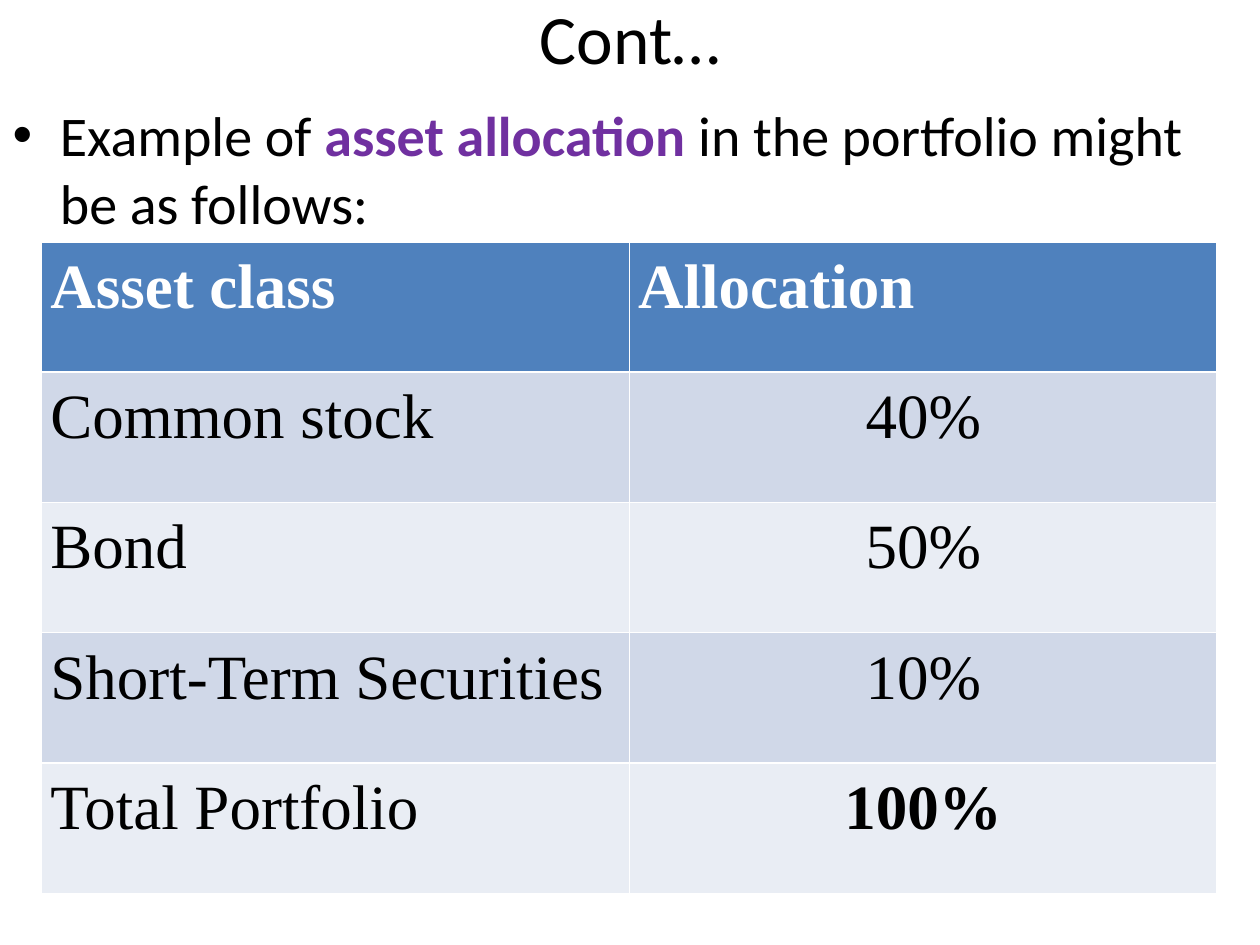
from dataclasses import dataclass

from pptx import Presentation
from pptx.dml.color import RGBColor
from pptx.enum.text import MSO_ANCHOR, MSO_AUTO_SIZE, PP_ALIGN as Align
from pptx.util import Inches, Pt

COLORS = {
    "text": "000000",
    "highlight": "7030A0",
    "header_text": "FFFFFF",
    "header": "4F81BD",
    "band_dark": "D0D8E8",
    "band_light": "E9EDF4",
}


@dataclass
class AllocationRow:
    asset_class: str
    share: str
    fill: str
    color: str = "text"
    bold_label: bool = False
    bold_share: bool = False
    share_align: Align = Align.CENTER


ROWS = [
    AllocationRow("Asset class", "Allocation", "header", "header_text",
                  True, True, Align.JUSTIFY),
    AllocationRow("Common stock", "40%", "band_dark"),
    AllocationRow("Bond", "50%", "band_light"),
    AllocationRow("Short-Term Securities", "10%", "band_dark"),
    AllocationRow("Total Portfolio", "100%", "band_light", bold_share=True),
]


def add_text(paragraph, text: str, *, size: float, font: str = "Calibri",
             color: str = "text", bold: bool = False) -> None:
    run = paragraph.add_run()
    run.text = text
    run.font.name = font
    run.font.size = Pt(size)
    run.font.bold = bold
    run.font.color.rgb = RGBColor.from_string(COLORS[color])


def place(shape, left: float, top: float, width: float, height: float) -> None:
    shape.left, shape.top = Inches(left), Inches(top)
    shape.width, shape.height = Inches(width), Inches(height)
    shape.text_frame.auto_size = MSO_AUTO_SIZE.NONE


def fill_cell(cell, text: str, row: AllocationRow, align: Align, bold: bool) -> None:
    cell.fill.solid()
    cell.fill.fore_color.rgb = RGBColor.from_string(COLORS[row.fill])
    cell.margin_left = cell.margin_right = Inches(0.07)
    cell.margin_top = cell.margin_bottom = 0
    paragraph = cell.text_frame.paragraphs[0]
    paragraph.alignment = align
    paragraph.line_spacing = 1.15
    add_text(paragraph, text, size=36, font="Times New Roman",
             color=row.color, bold=bold)


def add_allocation_table(slide, rows: list[AllocationRow]) -> None:
    table = slide.shapes.add_table(len(rows), 2, Inches(0.33), Inches(1.92),
                                   Inches(9.33), Inches(5.17)).table
    for index, row in enumerate(rows):
        fill_cell(table.cell(index, 0), row.asset_class, row,
                  Align.JUSTIFY, row.bold_label)
        fill_cell(table.cell(index, 1), row.share, row,
                  row.share_align, row.bold_share)


def main() -> None:
    presentation = Presentation()
    presentation.slide_width, presentation.slide_height = Inches(10), Inches(7.5)
    slide = presentation.slides.add_slide(presentation.slide_layouts[1])

    title = slide.shapes.title
    place(title, 0.5, 0, 9, 0.58)
    title.text_frame.vertical_anchor = MSO_ANCHOR.MIDDLE
    heading = title.text_frame.paragraphs[0]
    heading.alignment = Align.CENTER
    add_text(heading, "Cont…", size=39.6)

    body = slide.placeholders[1]
    place(body, 0, 0.75, 10, 6.5)
    bullet = body.text_frame.paragraphs[0]
    add_text(bullet, "Example of ", size=32)
    add_text(bullet, "asset allocation ", size=32, color="highlight", bold=True)
    add_text(bullet, "in the portfolio might be as follows:", size=32)

    add_allocation_table(slide, ROWS)
    presentation.save("out.pptx")


if __name__ == "__main__":
    main()
